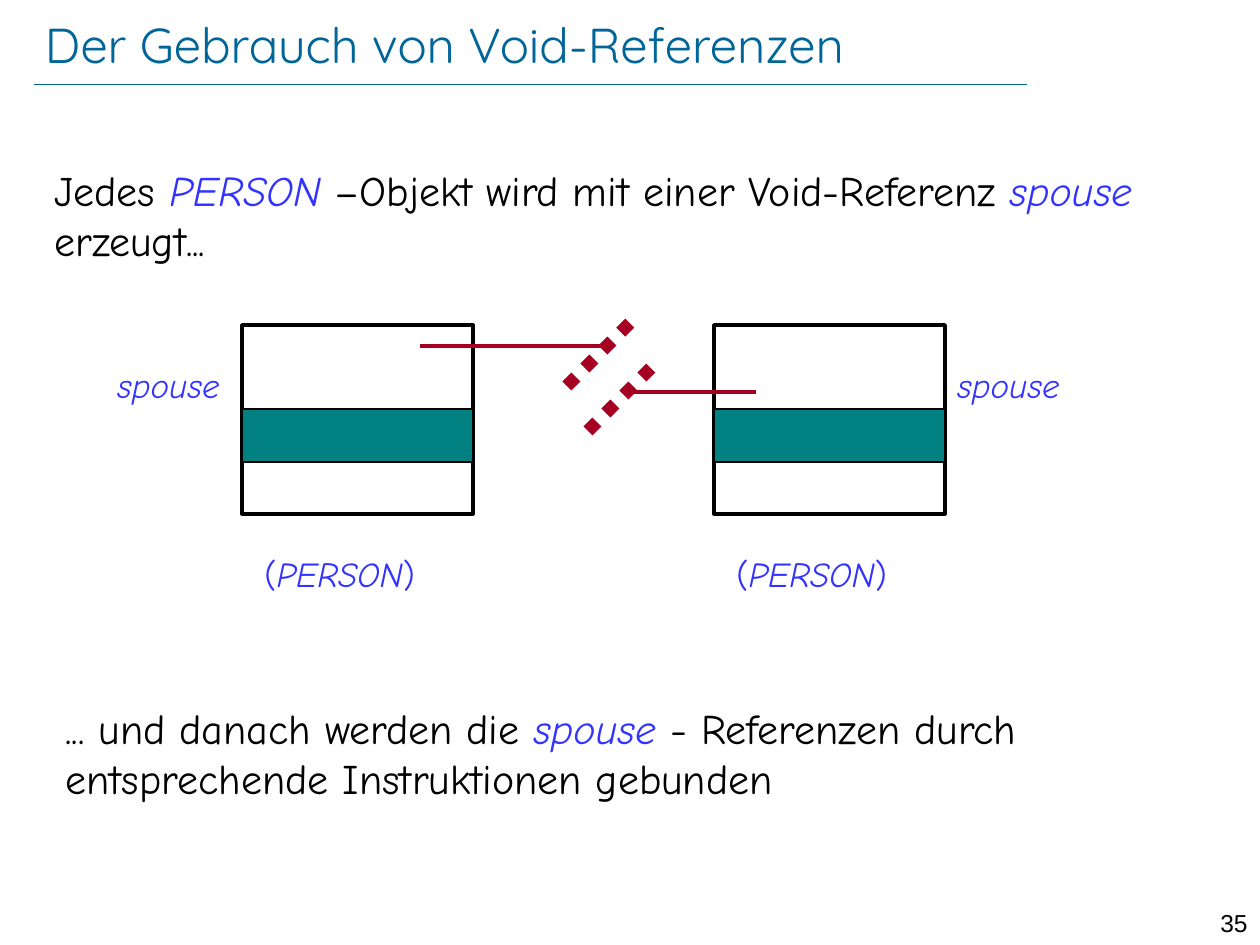
import pptx
import pptx.util
from lxml import etree
from pptx.dml.color import RGBColor
from pptx.enum.dml import MSO_LINE
from pptx.enum.shapes import MSO_CONNECTOR, MSO_SHAPE
from pptx.enum.text import MSO_ANCHOR, PP_ALIGN
from pptx.oxml.ns import qn

PX = pptx.util.Inches(1) // 126
COLORS = {
    "title": "006699", "text": "000000", "code": "3333FF",
    "band": "008080", "reference": "A50021",
}
BODY_FONT = "Comic Neue"

# Runs are (text, color, italic).
TITLE = [("Der Gebrauch von Void-Referenzen", "title", False)]
PAGE_NUMBER = [("35", "text", False)]
SPOUSE = [("spouse", "code", True)]
PERSON = [("(", "code", False), ("PERSON", "code", True), (")", "code", False)]
INTRO = [
    ("Jedes ", "text", False),
    ("PERSON", "code", True),
    (" –Objekt wird mit einer Void-Referenz ", "text", False),
    ("spouse ", "code", True),
    ("erzeugt...", "text", False),
]
CONCLUSION = [
    ("... und danach werden die ", "text", False),
    ("spouse", "code", True),
    (" - Referenzen durch entsprechende Instruktionen gebunden", "text", False),
]

# Each object: left edge of its box, left edge of its spouse label.
OBJECTS = [(242, 105), (714, 945)]
OBJECT_TOP, OBJECT_WIDTH, OBJECT_HEIGHT = 325, 231, 189
BAND_OFFSET, BAND_HEIGHT = 84, 53

# Each void reference: start and end of the line, lower left of the dotted bar.
REFERENCES = [((756, 392), (630, 392), (588, 431)),
              ((420, 346), (609, 346), (567, 386))]
BAR_SPAN = 63


def px(*lengths):
    return [length * PX for length in lengths]


def rgb(name):
    return RGBColor.from_string(COLORS[name])


def add_text(slide, box, runs, size, font=BODY_FONT):
    text_frame = slide.shapes.add_textbox(*px(*box)).text_frame
    text_frame.word_wrap = True
    paragraph = text_frame.paragraphs[0]
    for text, color, italic in runs:
        run = paragraph.add_run()
        run.text = text
        run.font.name = font
        run.font.size = pptx.util.Pt(size)
        run.font.italic = italic
        run.font.color.rgb = rgb(color)
    return text_frame


def add_rectangle(slide, box, line_width, fill=None):
    shape = slide.shapes.add_shape(MSO_SHAPE.RECTANGLE, *px(*box))
    shape.shadow.inherit = False
    if fill:
        shape.fill.solid()
        shape.fill.fore_color.rgb = rgb(fill)
    else:
        shape.fill.background()
    shape.line.color.rgb = rgb("text")
    shape.line.width = pptx.util.Pt(line_width)


def add_line(slide, start, end, color, width, dash=None):
    connector = slide.shapes.add_connector(
        MSO_CONNECTOR.STRAIGHT, *px(*start, *end))
    connector.line.color.rgb = rgb(color)
    connector.line.width = pptx.util.Pt(width)
    if dash:
        connector.line.dash_style = dash
    etree.SubElement(connector._element.spPr, qn("a:effectLst"))


def add_object(slide, left, label_left):
    """Draw one PERSON object with its field label and its type."""
    add_rectangle(slide, (left, OBJECT_TOP, OBJECT_WIDTH, OBJECT_HEIGHT), 2)
    add_rectangle(
        slide, (left, OBJECT_TOP + BAND_OFFSET, OBJECT_WIDTH, BAND_HEIGHT),
        0.75, "band")
    add_text(slide, (left + 10, 546, 221, 54), PERSON, 20)
    add_text(slide, (label_left, 357, 168, 54), SPOUSE, 20)


def add_void_reference(slide, start, end, bar_start):
    """Draw a reference line that ends at a slanted dotted bar."""
    add_line(slide, start, end, "reference", 2)
    bar_end = (bar_start[0] + BAR_SPAN, bar_start[1] - BAR_SPAN)
    add_line(slide, bar_start, bar_end, "reference", 7.25, MSO_LINE.ROUND_DOT)


def main():
    presentation = pptx.Presentation()
    presentation.slide_width, presentation.slide_height = px(1260, 945)
    slide = presentation.slides.add_slide(presentation.slide_layouts[6])

    add_line(slide, (34, 84), (1027, 84), "title", 0.25)
    page_number = add_text(slide, (1191, 902, 69, 30), PAGE_NUMBER, 14, "Arial")
    page_number.paragraphs[0].alignment = PP_ALIGN.RIGHT
    title = add_text(slide, (45, 15, 1032, 57), TITLE, 28, "Quicksand")
    title.margin_left = title.margin_right = 0
    title.margin_top = title.margin_bottom = 0
    title.vertical_anchor = MSO_ANCHOR.MIDDLE

    for left, label_left in OBJECTS:
        add_object(slide, left, label_left)
    add_text(slide, (42, 158, 1176, 115), INTRO, 24)
    add_text(slide, (53, 696, 1144, 115), CONCLUSION, 24)
    for start, end, bar_start in REFERENCES:
        add_void_reference(slide, start, end, bar_start)

    presentation.save("out.pptx")


if __name__ == "__main__":
    main()
